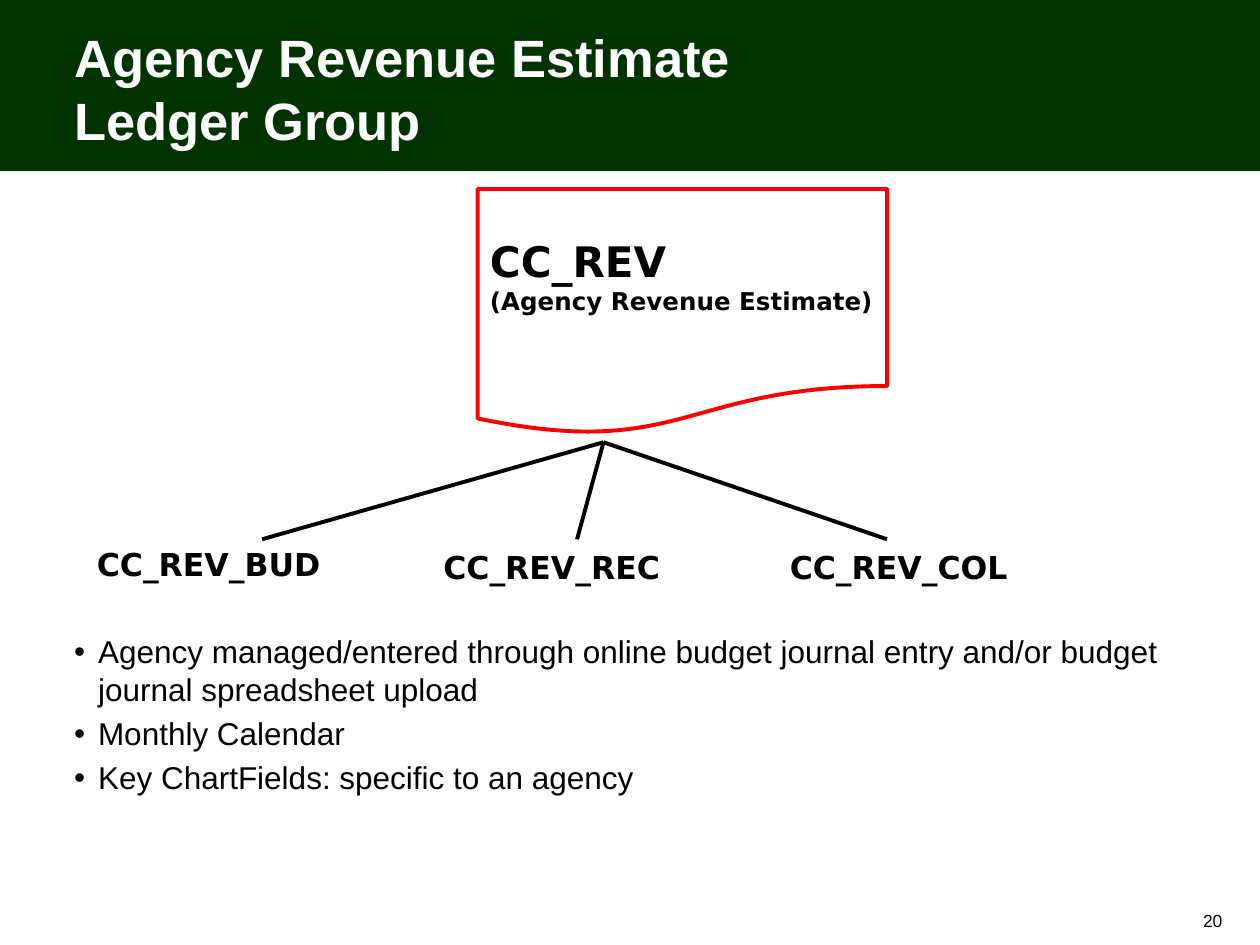
from lxml import etree
from pptx import Presentation
from pptx.dml.color import RGBColor
from pptx.enum import shapes, text
from pptx.oxml.ns import qn
from pptx.util import Inches, Pt


def color(value):
    return RGBColor.from_string(value)


def add_text(left, top, width, height, lines, font="Arial", bold=False, ink="000000"):
    """Add a wrapping text box; lines holds (words, point size) pairs."""
    box = page.shapes.add_textbox(Inches(left), Inches(top), Inches(width), Inches(height))
    frame = box.text_frame
    frame.word_wrap = True
    frame.text = "\n".join(words for words, size in lines)
    for para, (words, size) in zip(frame.paragraphs, lines):
        for span in para.runs:
            span.font.name = font
            span.font.size = Pt(size)
            span.font.bold = bold
            span.font.color.rgb = color(ink)
    return frame


deck = Presentation()
deck.slide_width, deck.slide_height = Inches(10), Inches(7.5)
page = deck.slides.add_slide(deck.slide_layouts[6])

# Title band
band = page.shapes.add_shape(shapes.MSO_SHAPE.RECTANGLE, 0, 0, Inches(10), Inches(1.36))
band.shadow.inherit = False
band.fill.solid()
band.fill.fore_color.rgb = color("003300")
band.line.fill.background()
title = add_text(0.49, 0, 6.87, 1.25, [("Agency Revenue Estimate Ledger Group", 30)],
                 bold=True, ink="FFFFFF")
title.vertical_anchor = text.MSO_ANCHOR.BOTTOM

# Ledger group document
document = page.shapes.add_shape(shapes.MSO_SHAPE.FLOWCHART_DOCUMENT,
                                 Inches(3.79), Inches(1.5), Inches(3.25), Inches(1.95))
document.shadow.inherit = False
document.fill.background()
document.line.color.rgb = color("FF0000")
document.line.width = Pt(2.25)
add_text(3.79, 1.82, 3.25, 0.97, [("CC_REV", 24), ("(Agency Revenue Estimate)", 14)],
         font="DejaVu Sans", bold=True)

# Ledgers and the branches that lead to them
ledgers = [
    ("CC_REV_BUD", 0.67, 4.28, 2.75, 2.08),
    ("CC_REV_REC", 3.42, 4.3, 2.75, 4.58),
    ("CC_REV_COL", 6.17, 4.3, 2.83, 7.04),
]
for name, left, top, width, branch_end in ledgers:
    add_text(left, top, width, 0.4, [(name, 18)], font="DejaVu Sans", bold=True)
    branch = page.shapes.add_connector(shapes.MSO_CONNECTOR.STRAIGHT, Inches(4.79), Inches(3.51),
                                       Inches(branch_end), Inches(4.28))
    branch.line.color.rgb = color("000000")
    branch.line.width = Pt(2.25)
    etree.SubElement(branch._element.spPr, qn("a:effectLst"))

# Bullets
bullets = add_text(0.49, 4.97, 9.13, 1.94, [
    ("Agency managed/entered through online budget journal entry and/or budget "
     "journal spreadsheet upload", 18),
    ("Monthly Calendar", 18),
    ("Key ChartFields: specific to an agency", 18),
])
for number, para in enumerate(bullets.paragraphs):
    if number:
        para.space_before = Pt(3.6)
    settings = para._p.get_or_add_pPr()
    settings.set("marL", str(Inches(0.19)))
    settings.set("indent", str(-Inches(0.19)))
    etree.SubElement(settings, qn("a:buFont"), typeface="Arial")
    etree.SubElement(settings, qn("a:buChar"), char="•")

# Page number
footer = add_text(7.95, 7.14, 1.85, 0.3, [("20", 10)])
footer.vertical_anchor = text.MSO_ANCHOR.BOTTOM
footer.paragraphs[0].alignment = text.PP_ALIGN.RIGHT
footer.paragraphs[0].line_spacing = 0.8

deck.save("out.pptx")
